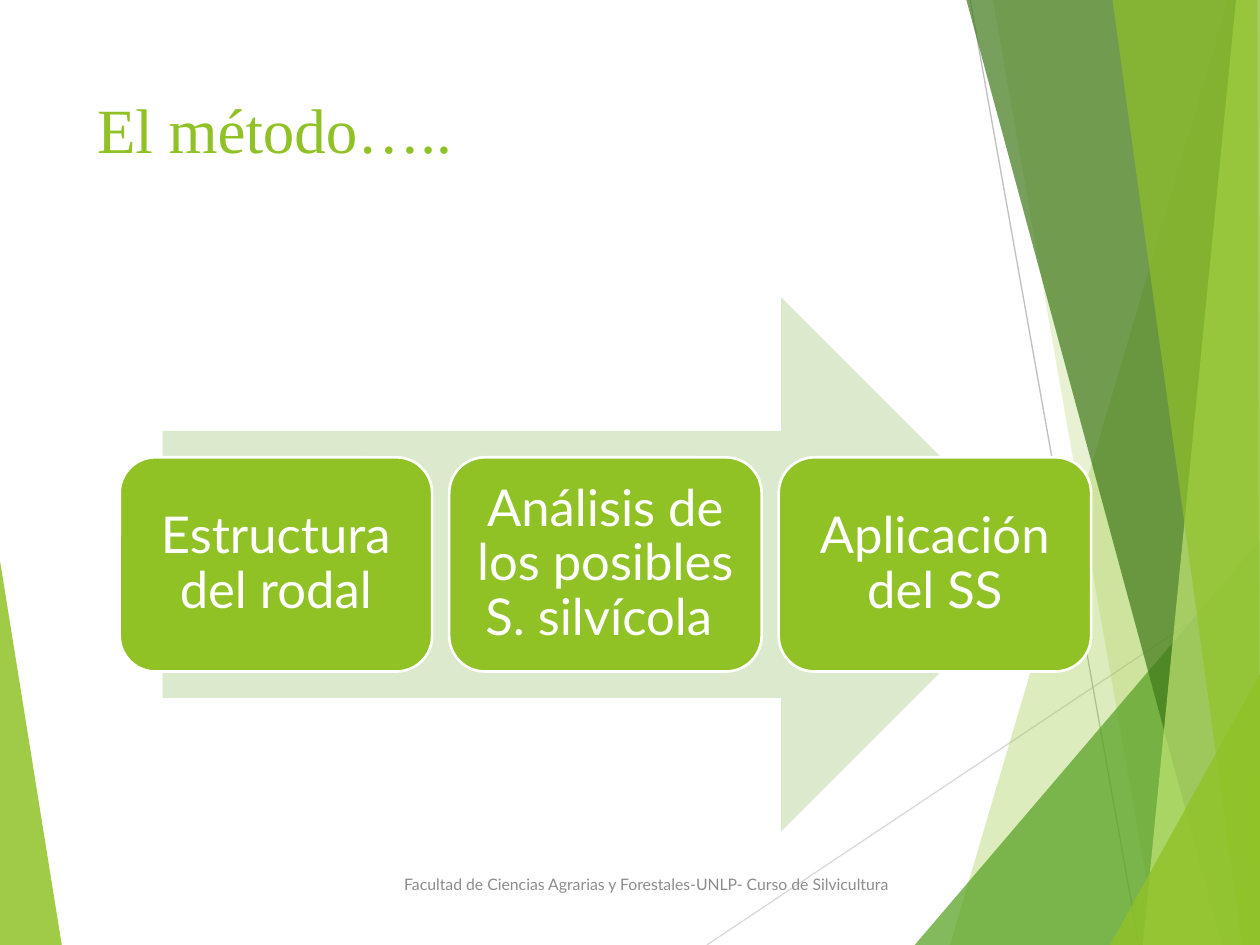
import pptx
import pptx.util
from dataclasses import dataclass
from lxml import etree
from pptx.dml.color import RGBColor
from pptx.enum.shapes import MSO_CONNECTOR, MSO_SHAPE
from pptx.enum.text import MSO_ANCHOR, MSO_AUTO_SIZE, PP_ALIGN
from pptx.oxml.ns import qn

Inches = pptx.util.Inches
Pt = pptx.util.Pt


@dataclass(frozen=True)
class Theme:
    green: str = "90C226"
    mid_green: str = "54A021"
    dark_green: str = "3F7819"
    light_green: str = "C0E474"
    arrow: str = "DBE9CD"
    white: str = "FFFFFF"
    footer: str = "8C8C8C"
    pale_line: str = "D9D9D9"
    grey_line: str = "BFBFBF"
    title_font: str = "Times New Roman"
    body_font: str = "Lato"
    title_size: float = 36
    step_size: float = 29
    footer_size: float = 9


THEME = Theme()
WIDTH, HEIGHT = 10, 7.5
STEPS = ["Estructura del rodal", "Análisis de los posibles S. silvícola ", "Aplicación del SS"]

# Ribbons of the backdrop: corner points, colour, opacity in percent
LEFT_RIBBON = ([(0, 4.45), (0.49, HEIGHT), (0, HEIGHT)], THEME.green, 85)
RIGHT_RIBBONS = [
    ([(9.75, 0), (7.54, HEIGHT), (WIDTH, HEIGHT), (WIDTH, 0)], THEME.green, 30),
    ([(7.88, 0), (9.19, HEIGHT), (WIDTH, HEIGHT), (WIDTH, 0)], THEME.green, 20),
    ([(7.26, HEIGHT), (WIDTH, 4.29), (WIDTH, HEIGHT)], THEME.mid_green, 72),
    ([(7.67, 0), (9.7, HEIGHT), (WIDTH, HEIGHT), (WIDTH, 0)], THEME.dark_green, 70),
    ([(9.81, 0), (9.07, HEIGHT), (WIDTH, HEIGHT), (WIDTH, 0)], THEME.light_green, 70),
    ([(8.83, 0), (9.86, HEIGHT), (WIDTH, HEIGHT), (9.98, 0)], THEME.green, 65),
    ([(8.81, HEIGHT), (WIDTH, 5.35), (WIDTH, HEIGHT)], THEME.green, 80),
]
BACKDROP_LINES = [
    ((5.61, HEIGHT), (WIDTH, 4.57), THEME.pale_line),
    ((7.7, 0), (9.04, HEIGHT), THEME.grey_line),
]


def rgb(color):
    return RGBColor.from_string(color)


def fill_plain(shape, color):
    shape.shadow.inherit = False
    shape.fill.solid()
    shape.fill.fore_color.rgb = rgb(color)
    shape.line.fill.background()


def style_text(paragraph, font, size, color):
    for run in paragraph.runs:
        run.font.name = font
        run.font.size = Pt(size)
        run.font.color.rgb = rgb(color)


def add_ribbon(slide, points, color, opacity):
    corners = [(Inches(x), Inches(y)) for x, y in points]
    builder = slide.shapes.build_freeform(*corners[0])
    builder.add_line_segments(corners[1:], close=True)
    ribbon = builder.convert_to_shape()
    fill_plain(ribbon, color)
    tint = ribbon._element.spPr.find(qn("a:solidFill"))[0]
    etree.SubElement(tint, qn("a:alpha")).set("val", str(opacity * 1000))


def add_backdrop(slide):
    add_ribbon(slide, *LEFT_RIBBON)
    for start, end, color in BACKDROP_LINES:
        line = slide.shapes.add_connector(
            MSO_CONNECTOR.STRAIGHT, *(Inches(v) for v in start + end))
        line.line.color.rgb = rgb(color)
        line.line.width = Pt(0.75)
        etree.SubElement(line._element.spPr, qn("a:effectLst"))
    for ribbon in RIGHT_RIBBONS:
        add_ribbon(slide, *ribbon)


def add_title(slide, left, top, width, height):
    title = slide.shapes.title
    title.left, title.top, title.width, title.height = (
        Inches(v) for v in (left, top, width, height))
    frame = title.text_frame
    frame.text = "El método….."
    frame.vertical_anchor = MSO_ANCHOR.TOP
    frame.auto_size = MSO_AUTO_SIZE.NONE
    frame.paragraphs[0].alignment = PP_ALIGN.LEFT
    style_text(frame.paragraphs[0], THEME.title_font, THEME.title_size, THEME.green)


def add_step(slide, label, left, top, width, height):
    step = slide.shapes.add_shape(
        MSO_SHAPE.ROUNDED_RECTANGLE, *(Inches(v) for v in (left, top, width, height)))
    fill_plain(step, THEME.green)
    step.line.color.rgb = rgb(THEME.white)
    step.line.width = Pt(1.5)
    frame = step.text_frame
    frame.word_wrap = True
    frame.vertical_anchor = MSO_ANCHOR.MIDDLE
    frame.margin_left = frame.margin_right = Inches(0.04)
    frame.margin_top = frame.margin_bottom = Inches(0.04)
    frame.text = label
    paragraph = frame.paragraphs[0]
    paragraph.alignment = PP_ALIGN.CENTER
    paragraph.line_spacing = 0.9
    style_text(paragraph, THEME.body_font, THEME.step_size, THEME.white)


def add_process(slide, left, top, width, height):
    # Arrow centred behind the steps
    arrow_width = 7.03
    arrow = slide.shapes.add_shape(
        MSO_SHAPE.RIGHT_ARROW, Inches(left + (width - arrow_width) / 2), Inches(top),
        Inches(arrow_width), Inches(height))
    fill_plain(arrow, THEME.arrow)
    # Equal steps spread over the full width
    step_width, step_height = 2.48, 1.7
    pitch = (width - step_width) / (len(STEPS) - 1)
    step_top = top + (height - step_height) / 2
    for index, label in enumerate(STEPS):
        add_step(slide, label, left + index * pitch, step_top, step_width, step_height)


def add_footer(slide, left, top, width, height):
    footer = slide.shapes.add_textbox(*(Inches(v) for v in (left, top, width, height)))
    frame = footer.text_frame
    frame.word_wrap = True
    frame.vertical_anchor = MSO_ANCHOR.MIDDLE
    frame.text = "Facultad de Ciencias Agrarias y Forestales-UNLP- Curso de Silvicultura"
    style_text(frame.paragraphs[0], THEME.body_font, THEME.footer_size, THEME.footer)


def main():
    deck = pptx.Presentation()
    deck.slide_width, deck.slide_height = Inches(WIDTH), Inches(HEIGHT)
    slide = deck.slides.add_slide(deck.slide_layouts.get_by_name("Title Only"))
    add_backdrop(slide)
    add_title(slide, 0.67, 0.67, 6.94, 1.44)
    add_process(slide, 0.95, 2.36, 7.71, 4.24)
    add_footer(slide, 3.11, 6.82, 5.06, 0.4)
    deck.save("out.pptx")


if __name__ == "__main__":
    main()
